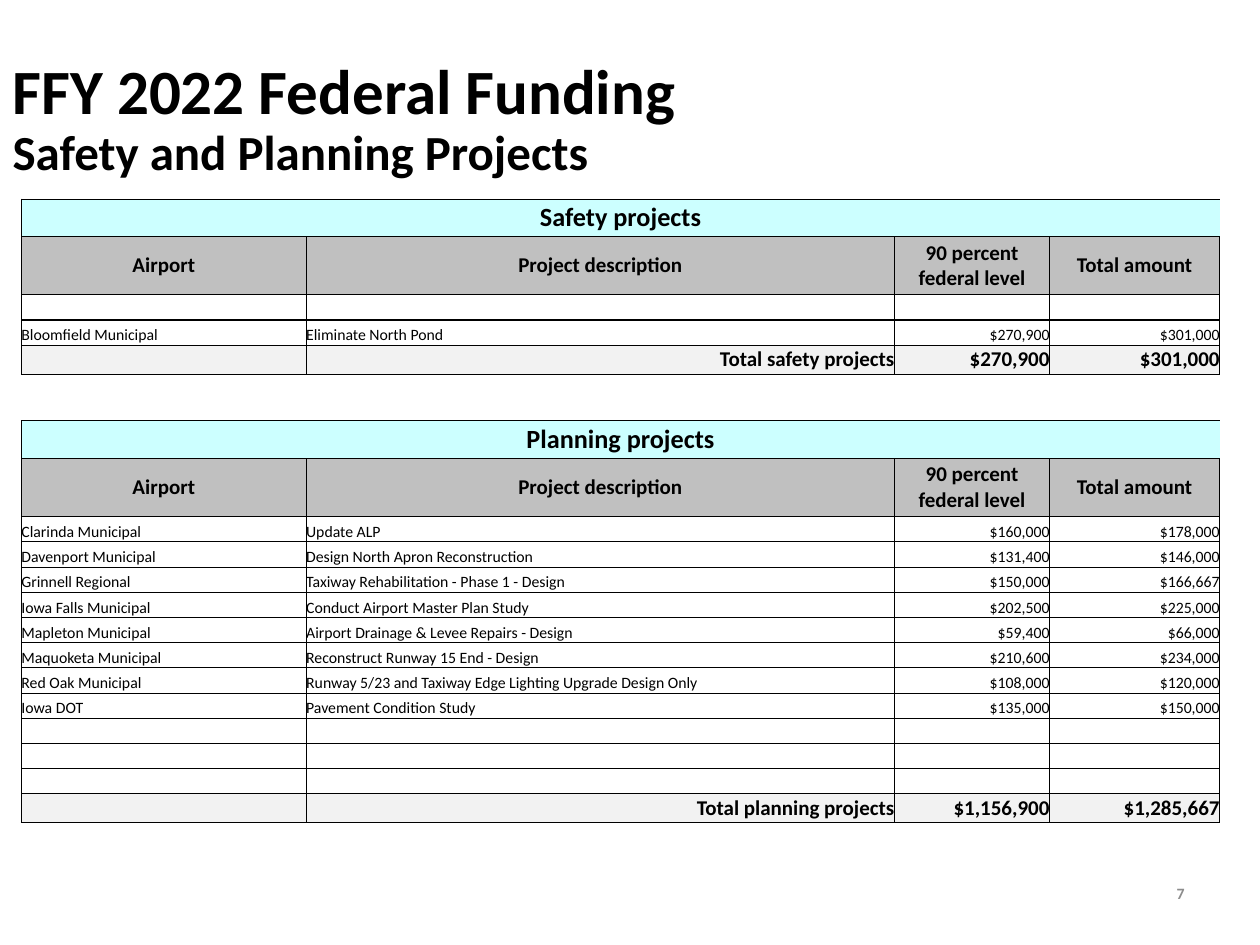
"""Build the federal funding slide with its safety and planning project table."""
from lxml import etree
from pptx import Presentation
from pptx import util as u
from pptx.dml.color import RGBColor
from pptx.enum import text
from pptx.oxml.ns import qn

BLACK = RGBColor(0x00, 0x00, 0x00)
WHITE = RGBColor(0xFF, 0xFF, 0xFF)
CYAN = RGBColor(0xCC, 0xFF, 0xFF)
SILVER = RGBColor(0xC0, 0xC0, 0xC0)
PALE = RGBColor(0xF2, 0xF2, 0xF2)
GREY = RGBColor(0x8C, 0x8C, 0x8C)
FONT = "Calibri"
LEFT, CENTER, RIGHT = text.PP_ALIGN.LEFT, text.PP_ALIGN.CENTER, text.PP_ALIGN.RIGHT
MIDDLE, BOTTOM = text.MSO_ANCHOR.MIDDLE, text.MSO_ANCHOR.BOTTOM

TITLE = [("FFY 2022 Federal Funding", 36), ("Safety and Planning Projects", 28)]
PAGE = "7"
HEADS = ("Airport", "Project description", "90 percent federal level", "Total amount")
EMPTY = ("",) * len(HEADS)
SAFETY = [("Bloomfield Municipal", "Eliminate North Pond", "$270,900", "$301,000")]
PLANNING = [
    ("Clarinda Municipal", "Update ALP", "$160,000", "$178,000"),
    ("Davenport Municipal", "Design North Apron Reconstruction", "$131,400", "$146,000"),
    ("Grinnell Regional", "Taxiway Rehabilitation - Phase 1 - Design", "$150,000", "$166,667"),
    ("Iowa Falls Municipal", "Conduct Airport Master Plan Study", "$202,500", "$225,000"),
    ("Mapleton Municipal", "Airport Drainage & Levee Repairs - Design", "$59,400", "$66,000"),
    ("Maquoketa Municipal", "Reconstruct Runway 15 End - Design", "$210,600", "$234,000"),
    ("Red Oak Municipal", "Runway 5/23 and Taxiway Edge Lighting Upgrade Design Only",
     "$108,000", "$120,000"),
    ("Iowa DOT", "Pavement Condition Study", "$135,000", "$150,000"),
]
ROWS = [
    ("band", ("Safety projects", "", "", "")),
    ("head", HEADS),
    ("item", EMPTY),
    *[("item", row) for row in SAFETY],
    ("total", ("", "Total safety projects", "$270,900", "$301,000")),
    ("gap", EMPTY),
    ("band", ("Planning projects", "", "", "")),
    ("head", HEADS),
    *[("item", row) for row in PLANNING],
    *[("item", EMPTY)] * 2,
    ("blank", EMPTY),
    ("total", ("", "Total planning projects", "$1,156,900", "$1,285,667")),
    ("end", EMPTY),
]
COLS = (2.26, 4.67, 1.23, 1.35)
ITEM_ALIGN = (LEFT, LEFT, RIGHT, RIGHT)
STYLES = {
    "band": dict(height=0.3, size=15, bold=True, fill=CYAN, align=(CENTER,) * 4, anchor=MIDDLE, sides="LTB"),
    "head": dict(height=0.46, size=12, bold=True, fill=SILVER, align=(CENTER,) * 4, anchor=MIDDLE, sides="LRTB"),
    "item": dict(height=0.2, size=9, bold=False, fill=None, align=ITEM_ALIGN, anchor=BOTTOM, sides="LRTB"),
    "blank": dict(height=0.2, size=9, bold=False, fill=WHITE, align=ITEM_ALIGN, anchor=BOTTOM, sides="LRTB"),
    "total": dict(height=0.23, size=12, bold=True, fill=PALE, align=(RIGHT,) * 4, anchor=MIDDLE, sides="LRTB"),
    "gap": dict(height=0.37, size=9, bold=False, fill=None, align=ITEM_ALIGN, anchor=MIDDLE, sides="TB"),
    "end": dict(height=0.23, size=9, bold=False, fill=WHITE, align=ITEM_ALIGN, anchor=MIDDLE, sides="T"),
}
THIN, THICK = 0.5, 0.75
HEAVY_SIDES = {2: "B", 3: "LRTB", 4: "T", len(ROWS) - 2: "B", len(ROWS) - 1: "T"}


def set_attrs(obj, values):
    for name, value in values.items():
        setattr(obj, name, value)


def format_font(font, size, bold=True, color=BLACK):
    set_attrs(font, {"name": FONT, "size": u.Pt(size), "bold": bold})
    font.color.rgb = color


def set_borders(cell, sides, heavy):
    tc_pr = cell._tc.get_or_add_tcPr()
    for side in "LRTB":
        width = THICK if side in heavy else THIN
        ln = etree.SubElement(tc_pr, qn(f"a:ln{side}"), w=str(u.Pt(width)))
        if side in sides:
            fill = etree.SubElement(ln, qn("a:solidFill"))
            etree.SubElement(fill, qn("a:srgbClr"), val=str(BLACK))
        else:
            etree.SubElement(ln, qn("a:noFill"))


def fill_cell(cell, words, style, align, heavy):
    set_attrs(cell, {"margin_left": 0, "margin_right": 0, "margin_top": 0,
                     "margin_bottom": 0, "vertical_anchor": style["anchor"]})
    set_borders(cell, style["sides"], heavy)
    if style["fill"] is None:
        cell.fill.background()
    else:
        cell.fill.solid()
        cell.fill.fore_color.rgb = style["fill"]
    p = cell.text_frame.paragraphs[0]
    p.alignment = align
    if words:
        r = p.add_run()
        r.text = words
        format_font(r.font, style["size"], style["bold"])
    else:
        etree.SubElement(p._p, qn("a:endParaRPr"), sz=str(style["size"] * 100))


def add_title(s):
    sp = s.shapes.title
    set_attrs(sp, {"left": 0, "top": u.Inches(0.33), "width": u.Inches(9.58), "height": u.Inches(1.25)})
    tf = sp.text_frame
    set_attrs(tf, {"word_wrap": True, "vertical_anchor": MIDDLE, "auto_size": text.MSO_AUTO_SIZE.NONE})
    p = tf.paragraphs[0]
    set_attrs(p, {"alignment": LEFT, "line_spacing": 0.9})
    for i, (words, size) in enumerate(TITLE):
        if i:
            p.add_line_break()
        r = p.add_run()
        r.text = words
        format_font(r.font, size)


def add_projects(s):
    heights = [STYLES[kind]["height"] for kind, _ in ROWS]
    frame = s.shapes.add_table(len(ROWS), len(COLS), u.Inches(0.17), u.Inches(1.58),
                               u.Inches(sum(COLS)), u.Inches(sum(heights)))
    table = frame.table
    set_attrs(table, {"first_row": False, "horz_banding": False})
    for column, width in zip(table.columns, COLS):
        column.width = u.Inches(width)
    for i, (kind, cells) in enumerate(ROWS):
        style = STYLES[kind]
        table.rows[i].height = u.Inches(style["height"])
        for j, words in enumerate(cells):
            heavy = HEAVY_SIDES.get(i, "")
            if i == len(ROWS) - 2 and j == 0:
                heavy += "L"
            fill_cell(table.cell(i, j), words, style, style["align"][j], heavy)
        if kind == "band":
            table.cell(i, 0).merge(table.cell(i, len(COLS) - 1))


def add_page_number(s):
    sp = s.shapes.add_textbox(u.Inches(7.17), u.Inches(6.83), u.Inches(2.33), u.Inches(0.52))
    tf = sp.text_frame
    set_attrs(tf, {"word_wrap": True, "vertical_anchor": MIDDLE})
    p = tf.paragraphs[0]
    p.alignment = RIGHT
    r = p.add_run()
    r.text = PAGE
    format_font(r.font, 9, color=GREY)


def main():
    prs = Presentation()
    set_attrs(prs, {"slide_width": u.Inches(10), "slide_height": u.Inches(7.5)})
    s = prs.slides.add_slide(prs.slide_layouts[5])
    add_title(s)
    add_page_number(s)
    add_projects(s)
    prs.save("out.pptx")


if __name__ == "__main__":
    main()
